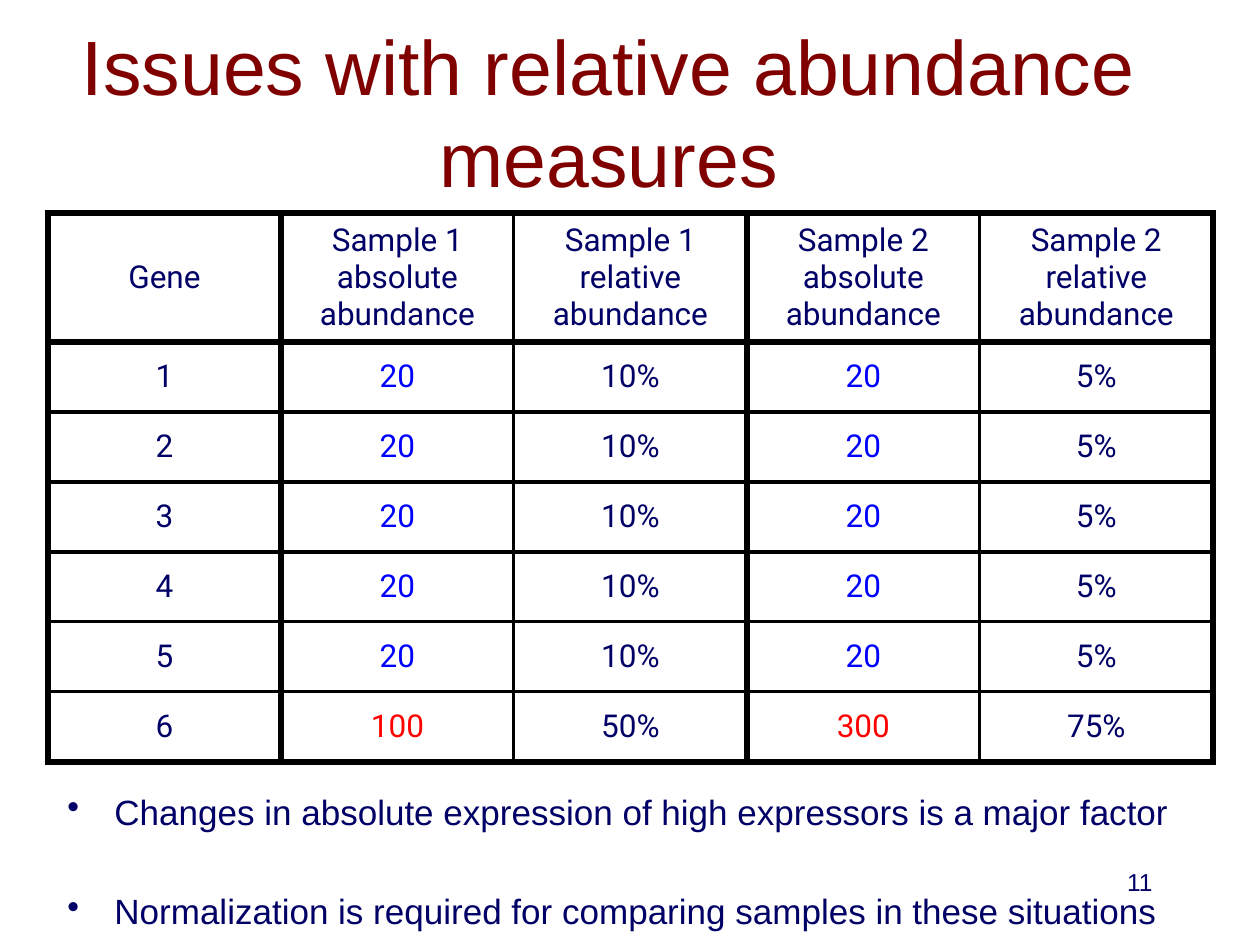
from dataclasses import dataclass

import lxml.etree
import pptx
import pptx.dml.color
import pptx.enum.text
import pptx.oxml.ns
import pptx.util

Align = pptx.enum.text.PP_ALIGN
Anchor = pptx.enum.text.MSO_ANCHOR
qn = pptx.oxml.ns.qn


@dataclass(frozen=True)
class Theme:
    title: str = "800000"
    text: str = "000066"
    blue: str = "0000FF"
    red: str = "FF0000"
    rule: str = "000000"
    sans: str = "Arial"
    grid: str = "Roboto"
    title_pt: int = 44
    body_pt: int = 20
    cell_pt: int = 18
    page_pt: int = 14
    thick: int = 4
    thin: int = 2


@dataclass(frozen=True)
class Box:
    left: int
    top: int
    width: int
    height: int


@dataclass(frozen=True)
class Style:
    font: str
    size: int
    color: str


@dataclass(frozen=True)
class Gene:
    name: str
    first: int
    share1: str
    second: int
    share2: str


THEME = Theme()
HEADS = ["Gene"] + [
    f"Sample {num} {kind} abundance"
    for num in (1, 2) for kind in ("absolute", "relative")
]
GENES = [Gene(str(num), 20, "10%", 20, "5%") for num in range(1, 6)]
GENES.append(Gene("6", 100, "50%", 300, "75%"))
POINTS = [
    "Changes in absolute expression of high expressors is a major factor",
    "Normalization is required for comparing samples in these situations",
]
COL_W, HEAD_H, ROW_H = 233, 129, 70
PAD, INDENT = 5, 47
# Line weights by grid line, left to right and top to bottom
COL_PT = [THEME.thick, THEME.thick, THEME.thin, THEME.thick, THEME.thin, THEME.thick]
ROW_PT = [THEME.thick] * 2 + [THEME.thin] * (len(GENES) - 1) + [THEME.thick]


def px(num: int) -> int:
    return pptx.util.Emu(num * 914400 // 126)


def place(box: Box) -> tuple:
    return px(box.left), px(box.top), px(box.width), px(box.height)


def write(para, text: str, style: Style, align=Align.LEFT) -> None:
    para.alignment = align
    run = para.add_run()
    run.text = text
    run.font.name = style.font
    run.font.size = pptx.util.Pt(style.size)
    run.font.color.rgb = pptx.dml.color.RGBColor.from_string(style.color)


def add_box(slide, box: Box, anchor=Anchor.TOP):
    frame = slide.shapes.add_textbox(*place(box)).text_frame
    frame.word_wrap = True
    frame.vertical_anchor = anchor
    return frame


def add_rule(cell, side: str, weight: int) -> None:
    line = lxml.etree.SubElement(
        cell._tc.get_or_add_tcPr(), qn(f"a:ln{side}"), w=str(pptx.util.Pt(weight)))
    fill = lxml.etree.SubElement(line, qn("a:solidFill"))
    lxml.etree.SubElement(fill, qn("a:srgbClr"), val=THEME.rule)


def fill_cell(cell, row: int, col: int, text: str, color: str) -> None:
    cell.margin_left = cell.margin_right = px(PAD)
    cell.margin_top = cell.margin_bottom = px(PAD)
    cell.vertical_anchor = Anchor.MIDDLE
    for side, weight in (("L", COL_PT[col]), ("R", COL_PT[col + 1]),
                         ("T", ROW_PT[row]), ("B", ROW_PT[row + 1])):
        add_rule(cell, side, weight)
    cell.fill.background()
    style = Style(THEME.grid, THEME.cell_pt, color)
    write(cell.text_frame.paragraphs[0], text, style, Align.CENTER)


def shade(count: int) -> str:
    """Colour of an absolute count: red marks a high expressor."""
    return THEME.red if count >= 100 else THEME.blue


def add_grid(slide) -> None:
    rows = [[(head, THEME.text) for head in HEADS]]
    for gene in GENES:
        rows.append([
            (gene.name, THEME.text),
            (str(gene.first), shade(gene.first)), (gene.share1, THEME.text),
            (str(gene.second), shade(gene.second)), (gene.share2, THEME.text),
        ])
    box = Box(48, 213, COL_W * len(HEADS), HEAD_H + ROW_H * len(GENES))
    table = slide.shapes.add_table(len(rows), len(HEADS), *place(box)).table
    table.first_row = table.horz_banding = False
    for col in table.columns:
        col.width = px(COL_W)
    for row, cells in enumerate(rows):
        table.rows[row].height = px(ROW_H if row else HEAD_H)
        for col, (text, color) in enumerate(cells):
            fill_cell(table.cell(row, col), row, col, text, color)


def add_points(slide) -> None:
    frame = add_box(slide, Box(55, 784, 1150, 146))
    style = Style(THEME.sans, THEME.body_pt, THEME.text)
    for num, text in enumerate(POINTS):
        para = frame.add_paragraph() if num else frame.paragraphs[0]
        para.space_before = pptx.util.Pt(33 if num else 0)
        props = para._p.get_or_add_pPr()
        props.set("marL", str(px(INDENT)))
        props.set("indent", str(-px(INDENT)))
        lxml.etree.SubElement(props, qn("a:buChar"), char="•")
        write(para, text, style)


def main() -> None:
    deck = pptx.Presentation()
    deck.slide_width, deck.slide_height = px(1260), px(945)
    slide = deck.slides.add_slide(deck.slide_layouts[6])

    title = add_box(slide, Box(3, 32, 1212, 157), Anchor.MIDDLE)
    style = Style(THEME.sans, THEME.title_pt, THEME.title)
    write(title.paragraphs[0], "Issues with relative abundance measures",
          style, Align.CENTER)
    add_grid(slide)
    add_points(slide)
    page = add_box(slide, Box(903, 861, 262, 63))
    style = Style(THEME.sans, THEME.page_pt, THEME.text)
    write(page.paragraphs[0], "11", style, Align.RIGHT)
    deck.save("out.pptx")


if __name__ == "__main__":
    main()
